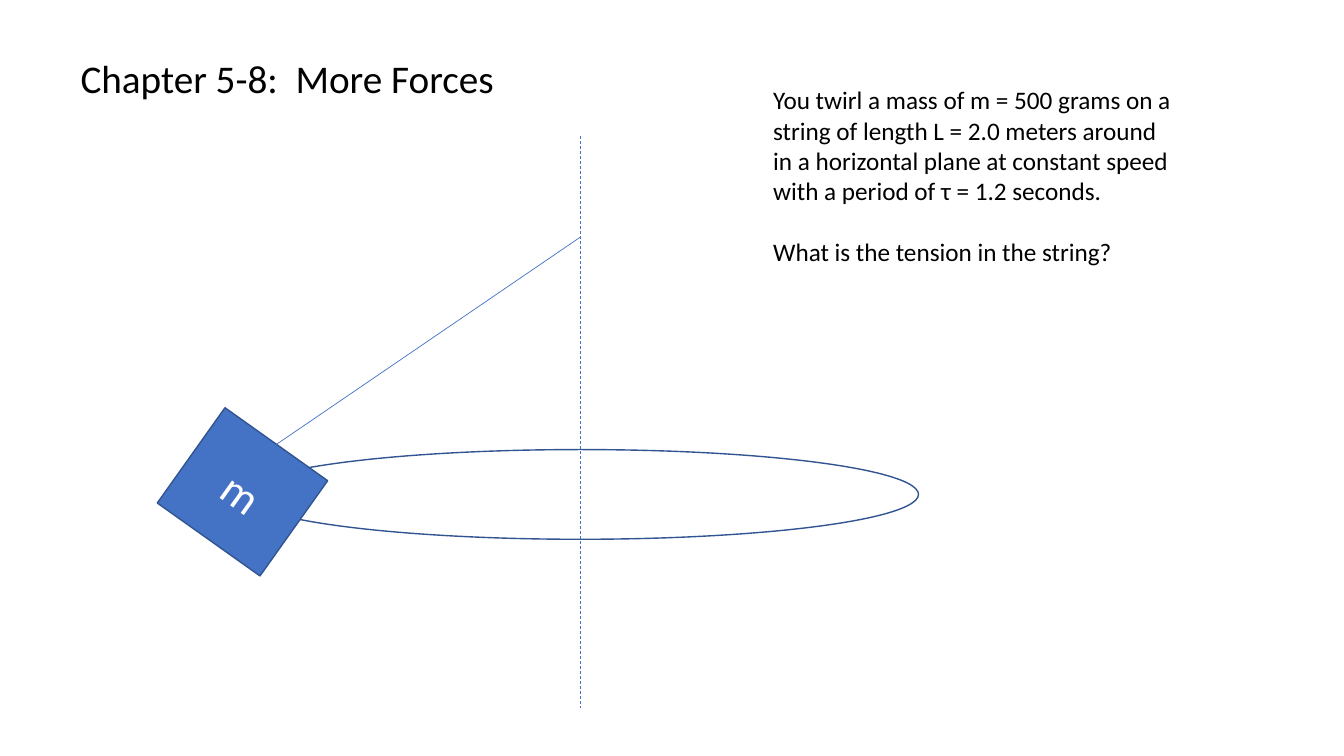
from dataclasses import dataclass
from typing import Optional

from lxml.etree import SubElement
from pptx import Presentation
from pptx.dml.color import RGBColor
from pptx.enum.dml import MSO_LINE_DASH_STYLE as Dash
from pptx.enum.shapes import MSO_CONNECTOR as Connector, MSO_SHAPE as Preset
from pptx.enum.text import MSO_ANCHOR as Anchor, PP_ALIGN as Align
from pptx.oxml.ns import qn
from pptx.shapes.autoshape import Shape
from pptx.shapes.shapetree import SlideShapes
from pptx.text.text import _Paragraph as Paragraph
from pptx.util import Inches, Pt

BLUE = RGBColor(0x44, 0x72, 0xC4)
DARK_BLUE = RGBColor(0x32, 0x54, 0x91)
BLACK = RGBColor(0x00, 0x00, 0x00)
WHITE = RGBColor(0xFF, 0xFF, 0xFF)
FONT = "Calibri"

AXIS_X = 5.76


@dataclass(frozen=True)
class Box:
    left: float
    top: float
    width: float
    height: float

    def lengths(self) -> list[Inches]:
        return [Inches(v) for v in (self.left, self.top, self.width, self.height)]


@dataclass(frozen=True)
class Segment:
    start: tuple[float, float]
    end: tuple[float, float]
    dash: Optional[Dash] = None


@dataclass(frozen=True)
class Note:
    box: Box
    paragraphs: tuple[str, ...]
    size: float
    gap: float = 0


STRING = Segment((2.74, 4.41), (AXIS_X, 2.35))
AXIS = Segment((AXIS_X, 1.35), (AXIS_X, 7.02), Dash.DASH)
TITLE = Note(Box(0.7, 0.49, 5.01, 0.57), ("Chapter 5-8:  More Forces",), 28)
PROBLEM = Note(
    Box(7.57, 0.79, 4.24, 1.92),
    (
        "You twirl a mass of m = 500 grams on a string of length L = 2.0 meters "
        "around in a horizontal plane at constant speed with a period of "
        "τ = 1.2 seconds.",
        "What is the tension in the string?",
    ),
    18,
    gap=22,
)


def style_text(paragraph: Paragraph, size: float, color: RGBColor) -> None:
    paragraph.font.name = FONT
    paragraph.font.size = Pt(size)
    paragraph.font.color.rgb = color


def add_outlined(shapes: SlideShapes, preset: Preset, box: Box) -> Shape:
    shape = shapes.add_shape(preset, *box.lengths())
    shape.shadow.inherit = False
    shape.line.color.rgb = DARK_BLUE
    shape.line.width = Pt(1)
    return shape


def add_orbit(shapes: SlideShapes) -> None:
    orbit = add_outlined(shapes, Preset.OVAL, Box(2.4, 4.46, 6.71, 0.89))
    orbit.fill.background()


def add_mass(shapes: SlideShapes) -> None:
    mass = add_outlined(shapes, Preset.RECTANGLE, Box(1.78, 4.3, 1.25, 1.16))
    mass.rotation = 35.4
    mass.fill.solid()
    mass.fill.fore_color.rgb = BLUE
    mass.text_frame.vertical_anchor = Anchor.MIDDLE
    label = mass.text_frame.paragraphs[0]
    label.text = "m"
    label.alignment = Align.CENTER
    style_text(label, 32, WHITE)


def add_segment(shapes: SlideShapes, segment: Segment) -> None:
    ends = [Inches(v) for v in segment.start + segment.end]
    line = shapes.add_connector(Connector.STRAIGHT, *ends)
    line.line.color.rgb = BLUE
    line.line.width = Pt(0.5)
    if segment.dash is not None:
        line.line.dash_style = segment.dash
    SubElement(line._element.spPr, qn("a:effectLst"))


def add_note(shapes: SlideShapes, note: Note) -> None:
    frame = shapes.add_textbox(*note.box.lengths()).text_frame
    frame.word_wrap = True
    for index, text in enumerate(note.paragraphs):
        paragraph = frame.add_paragraph() if index else frame.paragraphs[0]
        paragraph.text = text
        style_text(paragraph, note.size, BLACK)
        if index:
            paragraph.space_before = Pt(note.gap)


def main() -> None:
    deck = Presentation()
    deck.slide_width = Inches(13.33)
    deck.slide_height = Inches(7.5)
    shapes = deck.slides.add_slide(deck.slide_layouts[6]).shapes

    add_orbit(shapes)
    add_mass(shapes)
    add_segment(shapes, STRING)
    add_note(shapes, PROBLEM)
    add_segment(shapes, AXIS)
    add_note(shapes, TITLE)

    deck.save("out.pptx")


if __name__ == "__main__":
    main()
